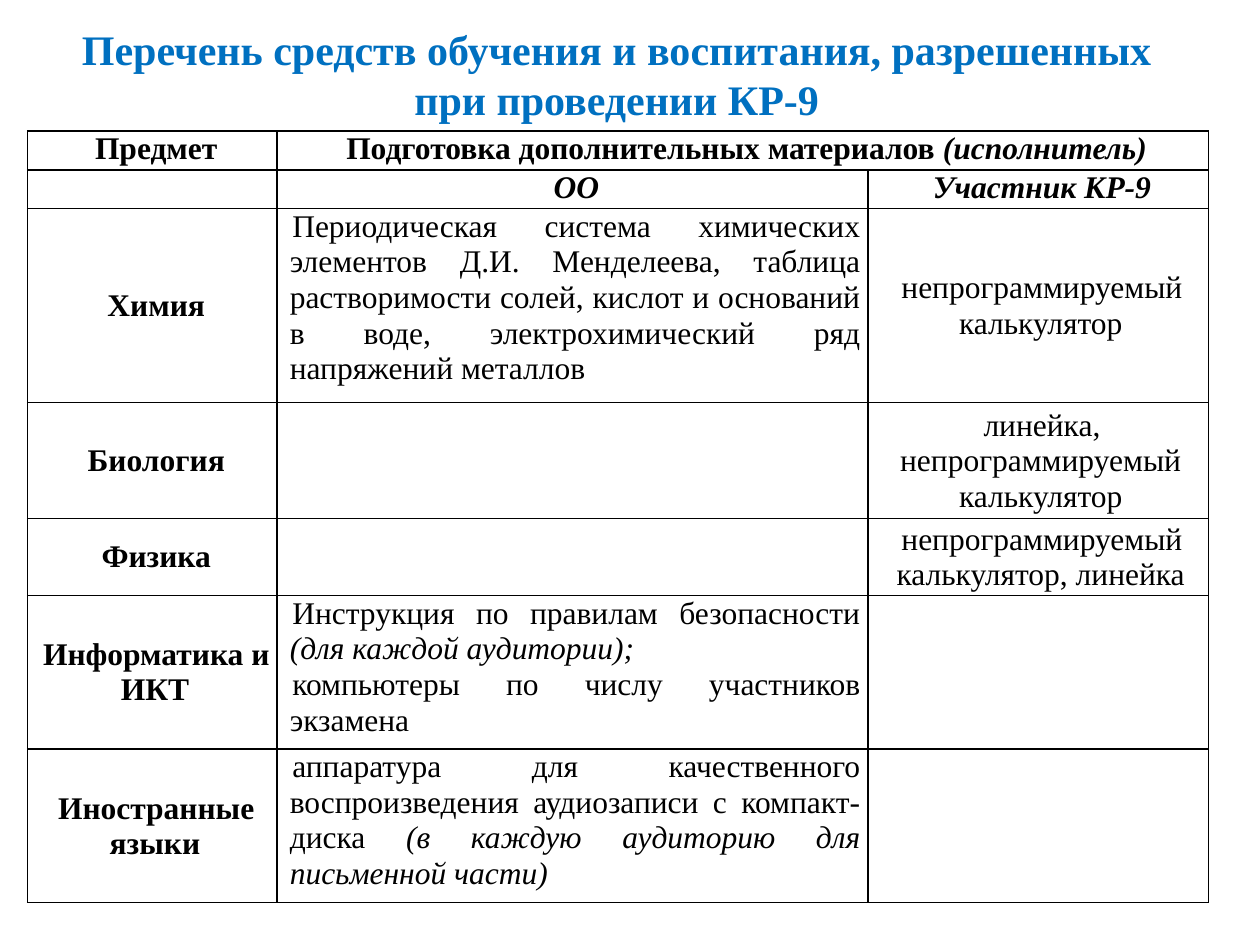
from lxml.etree import SubElement
from pptx import Presentation
from pptx.dml.color import RGBColor
from pptx.enum.text import MSO_ANCHOR as Anchor, PP_ALIGN as Align
from pptx.oxml.ns import qn
from pptx.util import Inches, Pt

HEADING = "Перечень средств обучения и воспитания, разрешенных при проведении КР-9"

# A cell is a list of paragraphs, a paragraph a list of (text, style) runs
HEADER_ROWS = [
    [[[("Предмет", "b")]],
     [[("Подготовка дополнительных материалов ", "b"), ("(исполнитель)", "bi")]], []],
    [[], [[("ОО", "bi")]], [[("Участник КР-9", "bi")]]],
]
# Subject, materials of the school, materials of the participant
SUBJECTS = [
    ("Химия",
     [[("Периодическая система химических элементов Д.И. Менделеева, таблица "
        "растворимости солей, кислот и оснований в воде, электрохимический "
        "ряд напряжений металлов", "")]],
     "непрограммируемый калькулятор"),
    ("Биология", [], "линейка, непрограммируемый калькулятор"),
    ("Физика", [], "непрограммируемый калькулятор, линейка"),
    ("Информатика и ИКТ",
     [[("Инструкция по правилам безопасности ", ""), ("(для каждой аудитории);", "i")],
      [("компьютеры по числу участников экзамена", "")]], ""),
    ("Иностранные языки",
     [[("аппаратура для качественного воспроизведения аудиозаписи с компакт-диска ", ""),
       ("(в каждую аудиторию для письменной части)", "i")]], ""),
]
COLUMN_WIDTHS = [1.98, 4.69, 2.7]
ROW_HEIGHTS = [0.31, 0.3, 1.54, 0.92, 0.61, 1.22, 1.22]


def color(value):
    return RGBColor.from_string(value)


class Page:
    font = "Times New Roman"
    ink = "000000"
    accent = "0070C0"

    def __init__(self, deck):
        self.slide = deck.slides.add_slide(deck.slide_layouts[5])

    def run(self, para, text, size, ink, style):
        run = para.add_run()
        run.text = text
        font = run.font
        font.name, font.size = self.font, Pt(size)
        font.bold, font.italic = "b" in style, "i" in style
        font.color.rgb = color(ink)

    def title(self, text, left, top, width, height):
        box = self.slide.shapes.title
        box.left, box.top = Inches(left), Inches(top)
        box.width, box.height = Inches(width), Inches(height)
        box.text_frame.word_wrap = True
        para = box.text_frame.paragraphs[0]
        para.alignment = Align.CENTER
        self.run(para, text, 24, self.accent, "b")

    def table(self, left, top, widths, heights):
        table = self.slide.shapes.add_table(
            len(heights), len(widths), Inches(left), Inches(top),
            Inches(sum(widths)), Inches(sum(heights))).table
        table.first_row = table.horz_banding = False
        for column, width in zip(table.columns, widths):
            column.width = Inches(width)
        for row, height in zip(table.rows, heights):
            row.height = Inches(height)
        return table

    def borders(self, cell):
        props = cell._tc.get_or_add_tcPr()
        for side in ("lnL", "lnR", "lnT", "lnB"):
            line = SubElement(props, qn(f"a:{side}"), w=str(Pt(1)))
            fill = SubElement(line, qn("a:solidFill"))
            SubElement(fill, qn("a:srgbClr"), val=self.ink)

    def cell(self, cell, paragraphs, align, anchor):
        self.borders(cell)
        cell.fill.background()
        cell.margin_left = cell.margin_right = Inches(0.06)
        cell.margin_top = cell.margin_bottom = 0
        cell.vertical_anchor = anchor
        frame = cell.text_frame
        for index, runs in enumerate(paragraphs):
            para = frame.add_paragraph() if index else frame.paragraphs[0]
            para.alignment = align
            para.line_spacing, para.space_after = 1.02, Pt(0.2)
            props = para._p.get_or_add_pPr()
            props.set("marL", str(Inches(0.04)))
            props.set("indent", str(Inches(0.02)))
            for text, style in runs:
                self.run(para, text, 18, self.ink, style)


def main():
    deck = Presentation()
    deck.slide_width, deck.slide_height = Inches(10), Inches(7.5)
    page = Page(deck)
    page.title(HEADING, 0.33, 0.13, 9.13, 0.91)
    table = page.table(0.22, 1.04, COLUMN_WIDTHS, ROW_HEIGHTS)

    # Header rows
    for row, contents in enumerate(HEADER_ROWS):
        for column, paragraphs in enumerate(contents):
            page.cell(table.cell(row, column), paragraphs, Align.CENTER, Anchor.TOP)
    table.cell(0, 1).merge(table.cell(0, 2))

    # One row per subject
    for row, (subject, school, participant) in enumerate(SUBJECTS, len(HEADER_ROWS)):
        own = [[(participant, "")]] if participant else []
        page.cell(table.cell(row, 0), [[(subject, "b")]], Align.CENTER, Anchor.MIDDLE)
        page.cell(table.cell(row, 1), school, Align.JUSTIFY, Anchor.TOP)
        page.cell(table.cell(row, 2), own, Align.CENTER, Anchor.MIDDLE)

    deck.save("out.pptx")


if __name__ == "__main__":
    main()
